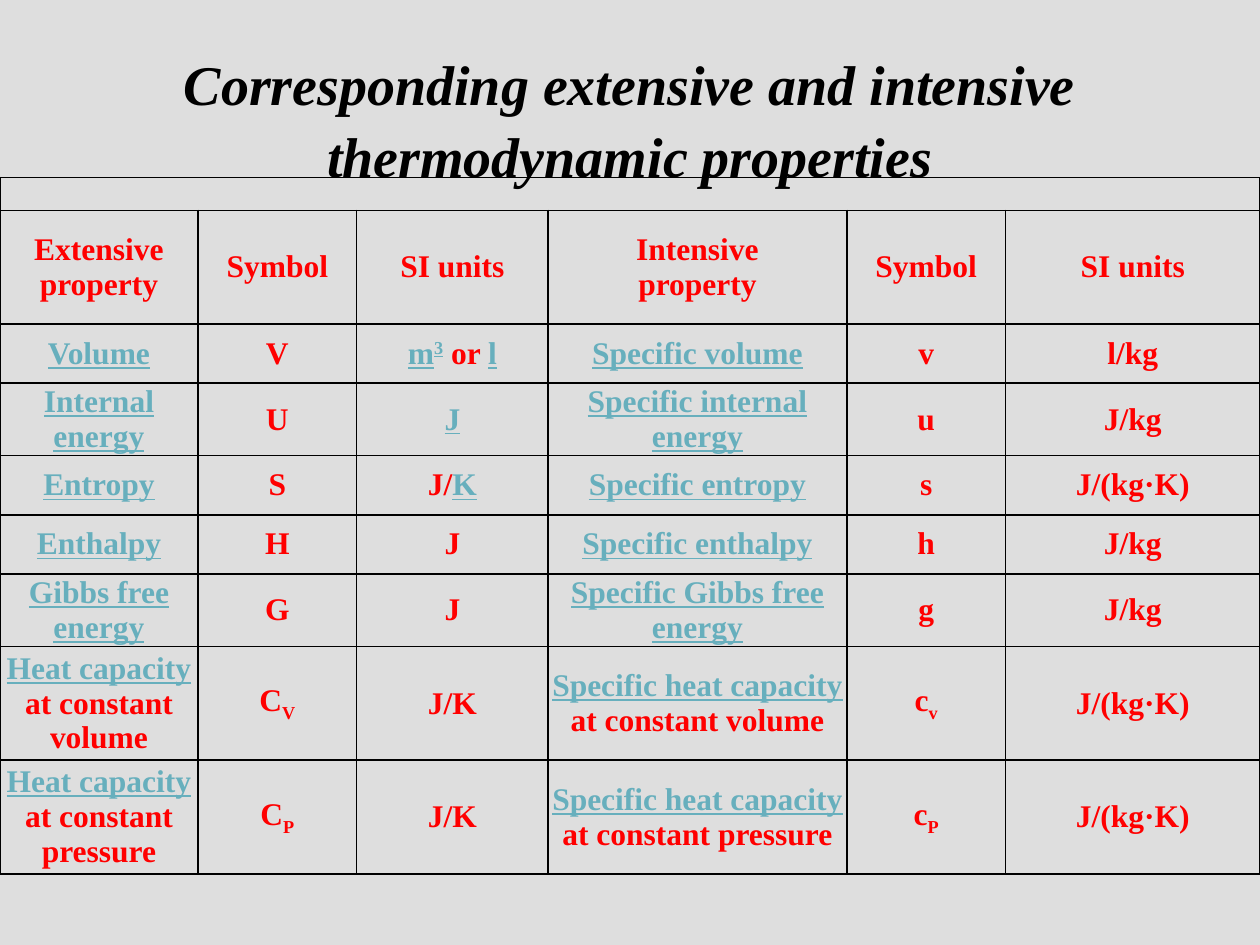
from dataclasses import dataclass

from lxml.etree import SubElement
from pptx import Presentation
from pptx.dml.color import RGBColor
from pptx.enum.text import MSO_ANCHOR, PP_ALIGN
from pptx.oxml.ns import qn
from pptx.util import Cm, Pt


@dataclass(frozen=True)
class Theme:
    """Colours, font and sizes of the slide."""
    back: str = "DEDEDE"
    ink: str = "000000"
    text: str = "FF0000"
    link: str = "67AFBD"
    font: str = "Times New Roman"
    head: int = 32
    body: int = 18
    small: int = 12
    rule: int = 1


THEME = Theme()
TITLE = "Corresponding extensive and intensive thermodynamic properties"
MARKS = {
    "_": {"color": THEME.link, "under": True},
    "^": {"color": THEME.link, "under": True, "base": 30},
    "~": {"base": -25},
}
COLS = [3.99, 3.2, 3.86, 6.02, 3.2, 5.13]
ROWS = [0.66, 2.29] + [1.19] * 5 + [2.29] * 2
CELLS = [
    ["Extensive\nproperty", "Symbol", "SI units",
     "Intensive\nproperty", "Symbol", "SI units"],
    ["_Volume", "V", "_m|^3| or |_l", "_Specific volume", "v", "l/kg"],
    ["_Internal energy", "U", "_J", "_Specific internal energy", "u", "J/kg"],
    ["_Entropy", "S", "J/|_K", "_Specific entropy", "s", "J/(kg·K)"],
    ["_Enthalpy", "H", "J", "_Specific enthalpy", "h", "J/kg"],
    ["_Gibbs free energy", "G", "J", "_Specific Gibbs free energy", "g", "J/kg"],
    ["_Heat capacity\n|at constant volume", "C|~V", "J/K",
     "_Specific heat capacity\n|at constant volume", "c|~v", "J/(kg·K)"],
    ["_Heat capacity\n|at constant pressure", "C|~P", "J/K",
     "_Specific heat capacity\n|at constant pressure", "c|~P", "J/(kg·K)"],
]


def write(para, text, size=THEME.body, color=THEME.text, slant=False,
          under=False, base=0):
    """Add formatted text to a centred paragraph, breaking at newlines."""
    para.alignment = PP_ALIGN.CENTER
    for i, line in enumerate(text.split("\n")):
        if i:
            para.add_line_break()
        if not line:
            continue
        run = para.add_run()
        run.text = line
        font = run.font
        font.name, font.size, font.bold = THEME.font, Pt(size), True
        font.italic, font.underline = slant, under
        font.color.rgb = RGBColor.from_string(color)
        if base:
            run._r.get_or_add_rPr().set("baseline", str(base * 1000))


def frame(cell):
    """Give a cell thin margins, ruled edges and no fill."""
    cell.margin_left = cell.margin_right = Cm(0.03)
    cell.margin_top = cell.margin_bottom = Cm(0.03)
    cell.vertical_anchor = MSO_ANCHOR.MIDDLE
    props = cell._tc.get_or_add_tcPr()
    for side in ("lnL", "lnR", "lnT", "lnB"):
        line = SubElement(props, qn(f"a:{side}"), w=str(Pt(THEME.rule)))
        fill = SubElement(line, qn("a:solidFill"))
        SubElement(fill, qn("a:srgbClr"), val=THEME.ink)
    cell.fill.background()


def add_title(slide, left, top, width, height):
    """Place and format the title placeholder."""
    title = slide.shapes.title
    title.left, title.top = Cm(left), Cm(top)
    title.width, title.height = Cm(width), Cm(height)
    title.text_frame.vertical_anchor = MSO_ANCHOR.MIDDLE
    para = title.text_frame.paragraphs[0]
    para.line_spacing = 1.08
    write(para, TITLE, size=THEME.head, color=THEME.ink, slant=True)


def add_grid(slide, left, top):
    """Build the property table below an empty merged row."""
    shape = slide.shapes.add_table(len(ROWS), len(COLS), Cm(left), Cm(top),
                                   Cm(sum(COLS)), Cm(sum(ROWS)))
    table = shape.table
    table.first_row = table.horz_banding = False
    for col, width in zip(table.columns, COLS):
        col.width = Cm(width)
    for row, height in zip(table.rows, ROWS):
        row.height = Cm(height)
    for cell in table.iter_cells():
        frame(cell)
    for cell in table.rows[0].cells:
        para = cell.text_frame.paragraphs[0]
        SubElement(para._p, qn("a:endParaRPr"), sz=str(THEME.small * 100))
    table.cell(0, 0).merge(table.cell(0, len(COLS) - 1))
    for r, row in enumerate(CELLS, 1):
        for c, text in enumerate(row):
            para = table.cell(r, c).text_frame.paragraphs[0]
            for part in text.split("|"):
                style = MARKS.get(part[0], {})
                write(para, part[1:] if style else part, **style)


def main():
    """Build and save the slide."""
    deck = Presentation()
    deck.slide_width, deck.slide_height = Cm(25.4), Cm(19.05)
    slide = deck.slides.add_slide(deck.slide_layouts[5])
    fill = slide.background.fill
    fill.solid()
    fill.fore_color.rgb = RGBColor.from_string(THEME.back)
    add_title(slide, 1.27, 0.76, 22.86, 3.18)
    add_grid(slide, 0, 3.58)
    deck.save("out.pptx")


if __name__ == "__main__":
    main()
